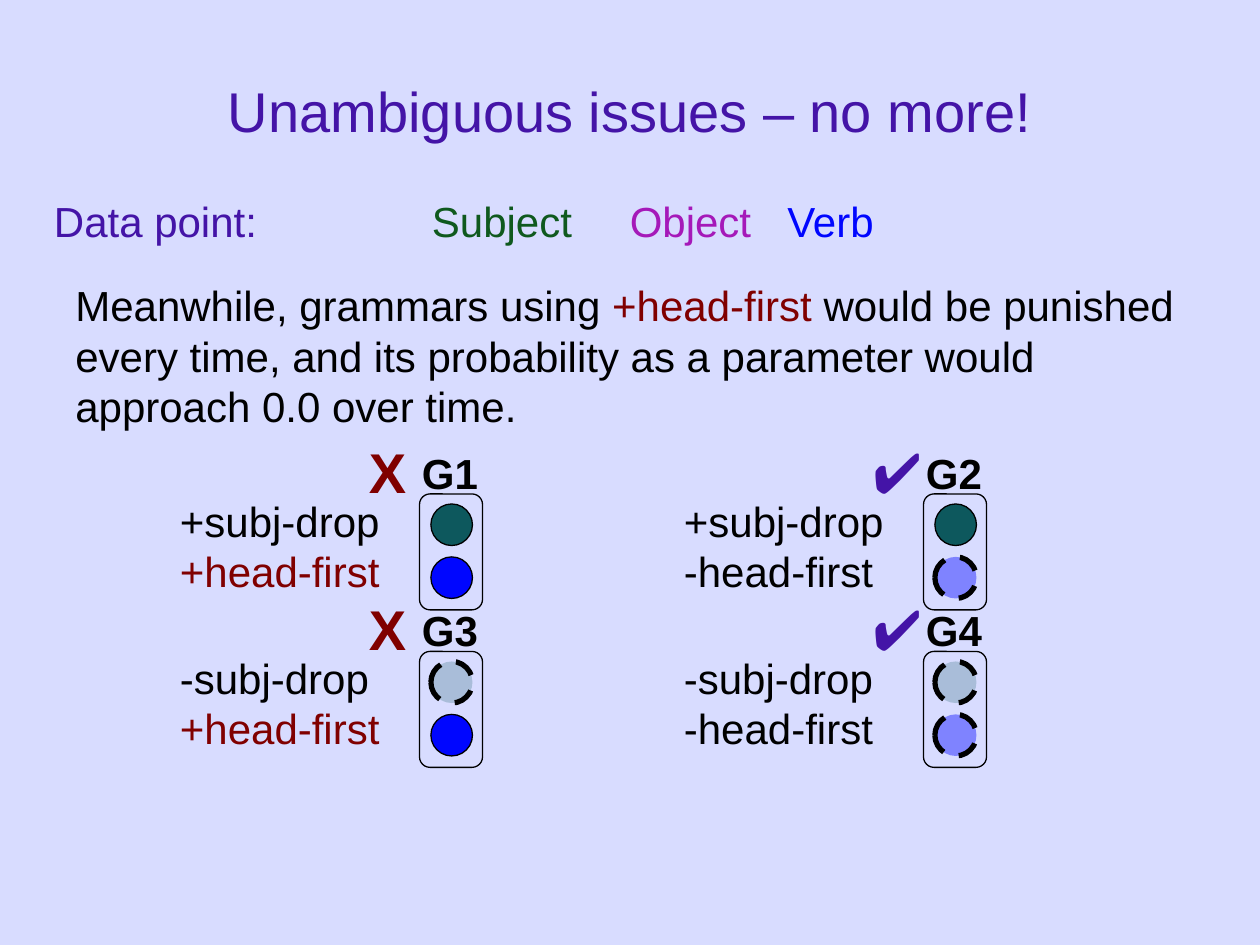
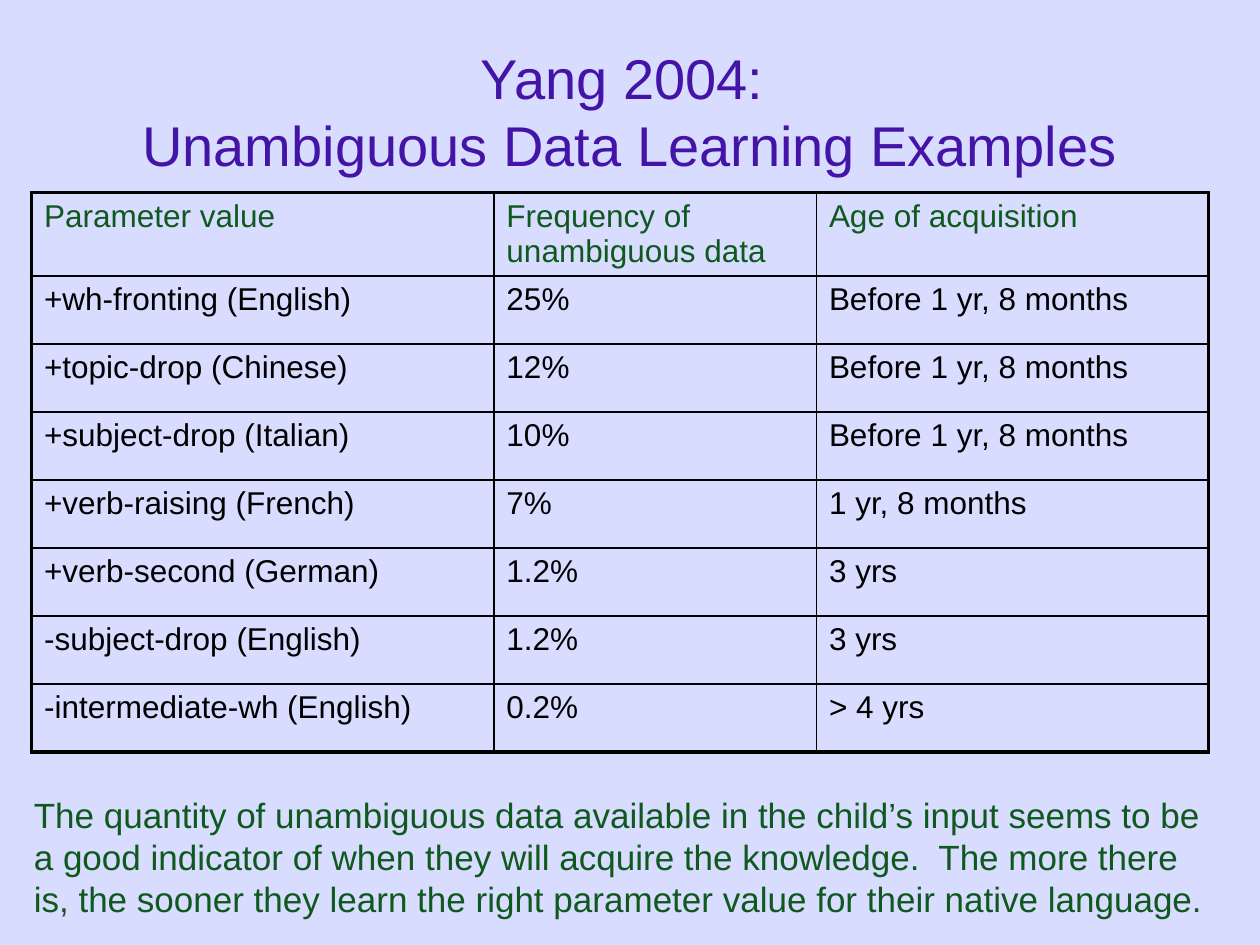
from pptx import Presentation
from pptx.dml.color import RGBColor
from pptx.enum.dml import MSO_LINE
from pptx.enum.shapes import MSO_SHAPE as Shape
from pptx.enum.text import MSO_ANCHOR as Anchor, MSO_AUTO_SIZE as AutoSize, PP_ALIGN as Align
from pptx.oxml.xmlchemy import OxmlElement
from pptx.util import Inches, Pt

FONT = "Arial"
BACKGROUND = "D8DCFF"
BLACK = "000000"
PURPLE = "4414A7"
GREEN = "0F591E"
MAGENTA = "A519B9"
BLUE = "0006FF"
TEAL = "0D585D"
DARK_RED = "800000"

THIN, THICK = 1, 2.25
DIAMETER = 0.33


def color(hex_string):
    return RGBColor.from_string(hex_string)


def add_child(parent, tag, **attributes):
    child = OxmlElement(tag)
    for name, value in attributes.items():
        child.set(name, str(value))
    parent.append(child)
    return child


class SlideBuilder:
    def __init__(self, deck):
        self.deck = deck
        self.slide = None
        fill = deck.slide_master.background.fill
        fill.solid()
        fill.fore_color.rgb = color(BACKGROUND)

    def start(self, title):
        self.slide = self.deck.slides.add_slide(self.deck.slide_layouts[5])
        holder = self.slide.shapes.title
        holder.left, holder.top = Inches(0.75), Inches(0.25)
        holder.width, holder.height = Inches(8.5), Inches(1.25)
        frame = holder.text_frame
        frame.text = title
        frame.auto_size = AutoSize.NONE
        frame.vertical_anchor = Anchor.MIDDLE
        frame.paragraphs[0].alignment = Align.CENTER
        for span in frame.paragraphs[0].runs:
            self.style(span, 32, PURPLE)

    def style(self, span, size, hex_string, bold=False):
        span.font.name = FONT
        span.font.size = Pt(size)
        span.font.bold = bold
        span.font.color.rgb = color(hex_string)

    def text(self, left, top, width, height, lines, size=24, bold=False, wrap=True, tabs=()):
        box = self.slide.shapes.add_textbox(Inches(left), Inches(top), Inches(width), Inches(height))
        frame = box.text_frame
        frame.word_wrap = wrap
        frame.auto_size = AutoSize.SHAPE_TO_FIT_TEXT
        for index, line in enumerate(lines):
            para = frame.add_paragraph() if index else frame.paragraphs[0]
            for words, hex_string in line:
                span = para.add_run()
                span.text = words
                self.style(span, size, hex_string, bold)
            if tabs:
                stops = add_child(para._p.get_or_add_pPr(), "a:tabLst")
                for stop in tabs:
                    add_child(stops, "a:tab", pos=Inches(stop), algn="l")

    def shape(self, kind, left, top, width, height, fill=None, opacity=None):
        shape = self.slide.shapes.add_shape(
            kind, Inches(left), Inches(top), Inches(width), Inches(height))
        shape.shadow.inherit = False
        shape.line.color.rgb = color(BLACK)
        shape.line.width = Pt(0.75)
        if fill is None:
            shape.fill.background()
            return
        shape.fill.solid()
        shape.fill.fore_color.rgb = color(fill)
        if opacity:
            shape.line.width = Pt(3)
            shape.line.dash_style = MSO_LINE.DASH
            solid = shape.fill._xPr.solidFill
            add_child(solid[0], "a:alpha", val=opacity * 1000)

    def table(self, left, top, widths, heights, rows):
        table = self.slide.shapes.add_table(
            len(rows), len(widths), Inches(left), Inches(top),
            Inches(sum(widths)), Inches(sum(heights))).table
        table.first_row = table.horz_banding = False
        for column, width in zip(table.columns, widths):
            column.width = Inches(width)
        for r, (row, height) in enumerate(zip(rows, heights)):
            table.rows[r].height = Inches(height)
            for c, words in enumerate(row):
                cell = table.cell(r, c)
                cell.text = words
                self.style(cell.text_frame.paragraphs[0].runs[0], 18, BLACK if r else GREEN)
                outer = {"L": c == 0, "R": c == len(widths) - 1,
                         "T": r == 0, "B": r == len(rows) - 1}
                self.borders(cell, outer)
                cell.fill.background()

    def borders(self, cell, outer):
        properties = cell._tc.get_or_add_tcPr()
        for side, is_outer in outer.items():
            line = add_child(properties, f"a:ln{side}", w=Pt(THICK if is_outer else THIN))
            add_child(add_child(line, "a:solidFill"), "a:srgbClr", val=BLACK)

    def grammar(self, name, left, top, subject_drop, head_first):
        parameters = [
            [(f"{'+' if subject_drop else '-'}subj-drop", BLACK)],
            [("+head-first", DARK_RED) if head_first else ("-head-first", BLACK)],
        ]
        self.text(left, top + 0.38, 1.9, 0.9, parameters)
        self.shape(Shape.OVAL, left + 2.09, top + 0.5, DIAMETER, DIAMETER,
                   TEAL, None if subject_drop else 23)
        self.shape(Shape.OVAL, left + 2.09, top + 0.92, DIAMETER, DIAMETER,
                   BLUE, None if head_first else 41)
        self.shape(Shape.ROUNDED_RECTANGLE, left + 2, top + 0.42, 0.5, 0.92)
        self.text(left + 1.92, top, 0.65, 0.5, [[(name, BLACK)]], bold=True, wrap=False)
        mark, tint, width = ("X", DARK_RED, 0.5) if head_first else ("✔", PURPLE, 0.65)
        self.text(left + 1.5, top - 0.08, width, 0.64, [[(mark, tint)]], 32, True, False)


def build_grammar_slide(page):
    page.start("Unambiguous issues – no more!")
    page.text(0.33, 1.5, 9.67, 0.5, [[
        ("Data point:\t", PURPLE), ("Subject\t", GREEN), ("Object\t", MAGENTA), ("Verb", BLUE),
    ]], tabs=(3, 4.57, 5.82))
    page.text(0.5, 2.17, 9, 1.31, [[
        ("Meanwhile, grammars using ", BLACK),
        ("+head-first ", DARK_RED),
        ("would be punished every time, and its probability as a parameter "
         "would approach 0.0 over time.", BLACK),
    ]])
    for index in range(4):
        row, column = divmod(index, 2)
        page.grammar(f"G{index + 1}", 1.33 + 4 * column, 3.5 + 1.25 * row,
                     subject_drop=row == 0, head_first=column == 0)


def build_frequency_slide(page):
    page.start("Yang 2004: \vUnambiguous Data Learning Examples")
    rows = [
        ("Parameter value", "Frequency of unambiguous data", "Age of acquisition"),
        ("+wh-fronting (English)", "25%", "Before 1 yr, 8 months"),
        ("+topic-drop (Chinese)", "12%", "Before 1 yr, 8 months"),
        ("+subject-drop (Italian)", "10%", "Before 1 yr, 8 months"),
        ("+verb-raising (French)", "7%", "1 yr, 8 months"),
        ("+verb-second (German)", "1.2%", "3 yrs"),
        ("-subject-drop (English)", "1.2%", "3 yrs"),
        ("-intermediate-wh (English)", "0.2%", "> 4 yrs"),
    ]
    page.table(0.25, 1.53, (3.67, 2.56, 3.11), [0.66] + [0.54] * 7, rows)
    page.text(0.17, 6.25, 9.58, 1.1, [[(
        "The quantity of unambiguous data available in the child’s input seems to be "
        "a good indicator of when they will acquire the knowledge.  The more there is, "
        "the sooner they learn the right parameter value for their native language.", GREEN)]], 20)


def main():
    deck = Presentation()
    deck.slide_width, deck.slide_height = Inches(10), Inches(7.5)
    page = SlideBuilder(deck)
    build_grammar_slide(page)
    build_frequency_slide(page)
    deck.save("out.pptx")


if __name__ == "__main__":
    main()
